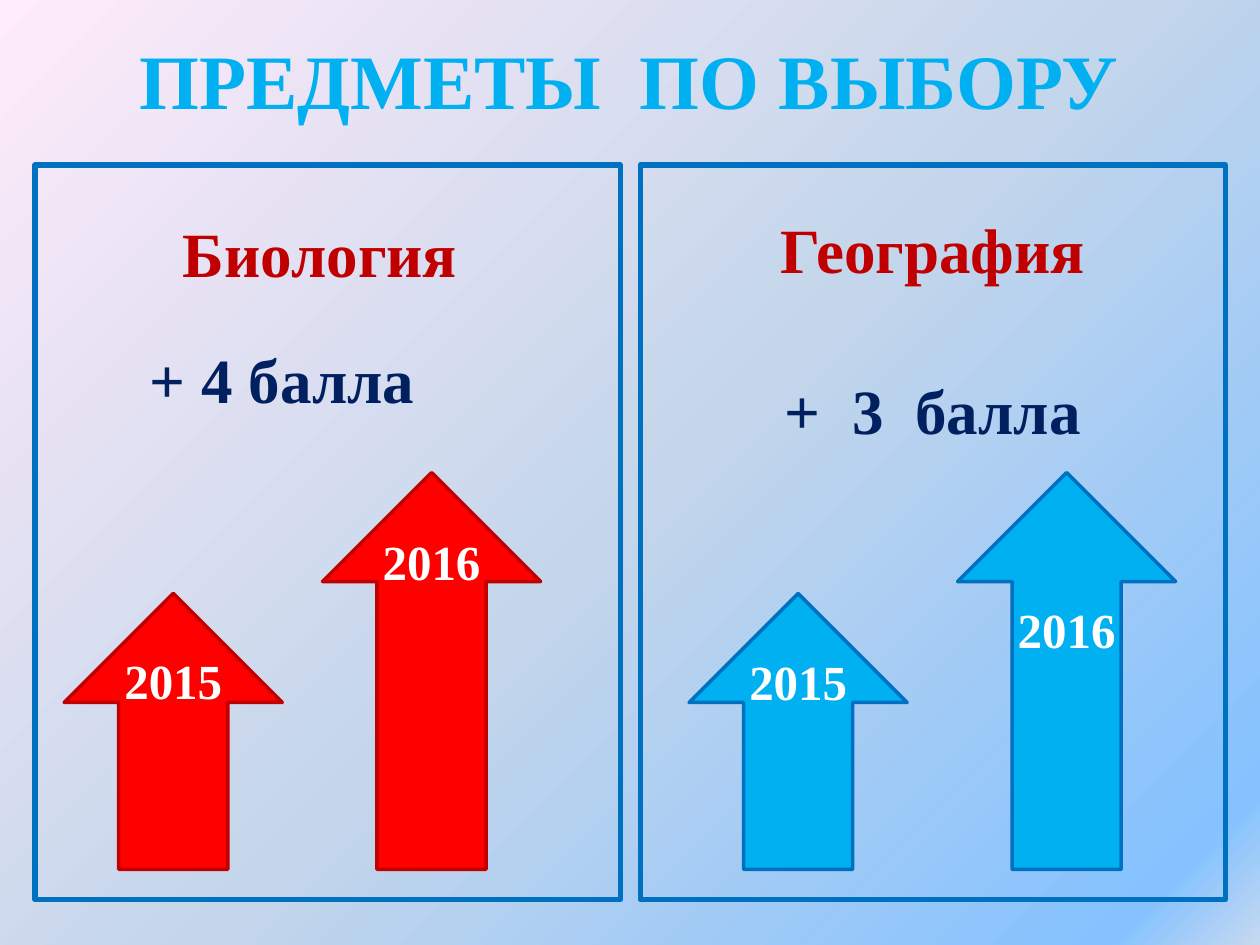
from lxml import etree
from pptx import Presentation
from pptx.dml.color import RGBColor
from pptx.enum.shapes import MSO_SHAPE
from pptx.enum.text import MSO_ANCHOR, PP_ALIGN
from pptx.oxml.ns import qn
from pptx.util import Pt

RECT, UP_ARROW = MSO_SHAPE.RECTANGLE, MSO_SHAPE.UP_ARROW
CENTER, TOP = PP_ALIGN.CENTER, MSO_ANCHOR.TOP

FONT = "Times New Roman"
COLORS = {
    "sky": "00B0F0", "blue": "0070C0", "navy": "002060",
    "red": "FF0000", "dark_red": "C00000", "white": "FFFFFF",
}
BACKGROUND = [(0, "C6D9F1"), (7, "85C2FF"), (48, "C4D6EB"), (100, "FFEBFA")]

PANEL_TOP, PANEL_W, PANEL_H = 94.3, 334.4, 419.8
ARROW_W, ARROW_BOTTOM = 124.6, 496.8
LABEL_W, LABEL_H = 71.3, 41


def rgb(name):
    return RGBColor.from_string(COLORS[name])


def set_background(s):
    """Radial gradient centred on the bottom right corner."""
    fill = s.background.fill
    fill.gradient()
    grad = s.background._cSld.find(".//" + qn("a:gradFill"))
    for child in list(grad):
        grad.remove(child)
    stops = etree.SubElement(grad, qn("a:gsLst"))
    for pos, color in BACKGROUND:
        gs = etree.SubElement(stops, qn("a:gs"), pos=str(pos * 1000))
        etree.SubElement(gs, qn("a:srgbClr"), val=color)
    circle = etree.SubElement(grad, qn("a:path"), path="circle")
    etree.SubElement(circle, qn("a:fillToRect"), l="100000", t="100000")


def place(sp, x, y, w, h):
    sp.left, sp.top, sp.width, sp.height = Pt(x), Pt(y), Pt(w), Pt(h)


def write(p, text, size, color):
    p.text = text
    p.alignment = CENTER
    for r in p.runs:
        r.font.name, r.font.size, r.font.bold = FONT, Pt(size), True
        r.font.color.rgb = rgb(color)


def add_outlined(s, kind, x, y, w, h, line, weight, fill=None):
    sp = s.shapes.add_shape(kind, Pt(x), Pt(y), Pt(w), Pt(h))
    sp.shadow.inherit = False
    if fill:
        sp.fill.solid()
        sp.fill.fore_color.rgb = rgb(fill)
    else:
        sp.fill.background()
    sp.line.color.rgb = rgb(line)
    sp.line.width = Pt(weight)
    return sp


def add_panel(s, x, inset, subject, gain=None):
    sp = add_outlined(s, RECT, x, PANEL_TOP, PANEL_W, PANEL_H, "blue", 3)
    tf = sp.text_frame
    tf.vertical_anchor = TOP
    tf.margin_top = Pt(inset)
    write(tf.paragraphs[0], subject, 36, "dark_red")
    if gain:
        p = tf.add_paragraph()
        write(p, gain, 36, "navy")
        p.space_before = Pt(48.6)


def add_label(s, x, y, w, h, text, size, color):
    tf = s.shapes.add_textbox(Pt(x), Pt(y), Pt(w), Pt(h)).text_frame
    tf.word_wrap = False
    write(tf.paragraphs[0], text, size, color)


def add_year_arrow(s, x, height, year, label_top, fill, line):
    add_outlined(s, UP_ARROW, x, ARROW_BOTTOM - height, ARROW_W, height,
                 line, 2, fill)
    add_label(s, x + (ARROW_W - LABEL_W) / 2, label_top, LABEL_W, LABEL_H,
              year, 28, "white")


def main():
    prs = Presentation()
    prs.slide_width, prs.slide_height = Pt(720), Pt(540)
    s = prs.slides.add_slide(prs.slide_layouts[5])
    set_background(s)

    # Title
    title = s.shapes.title
    place(title, 69.8, 15.1, 579.6, 60.5)
    title.text_frame.word_wrap = False
    title.text_frame.vertical_anchor = TOP
    write(title.text_frame.paragraphs[0], "ПРЕДМЕТЫ  ПО ВЫБОРУ", 44, "sky")

    # Subject panels
    add_panel(s, 20, 28, "Биология ")
    add_panel(s, 365.8, 26, "География", "+  3  балла")
    add_label(s, 77.8, 190.8, 167, 51, "+ 4 балла", 36, "navy")

    # Arrows: left, height, year, label top, fill, line
    for arrow in [
        (36.7, 157.7, "2015", 367.9, "red", "dark_red"),
        (184.3, 226.8, "2016", 300.2, "red", "dark_red"),
        (393.8, 157.7, "2015", 368.6, "sky", "blue"),
        (547.2, 226.8, "2016", 339.1, "sky", "blue"),
    ]:
        add_year_arrow(s, *arrow)

    prs.save("out.pptx")


if __name__ == "__main__":
    main()
